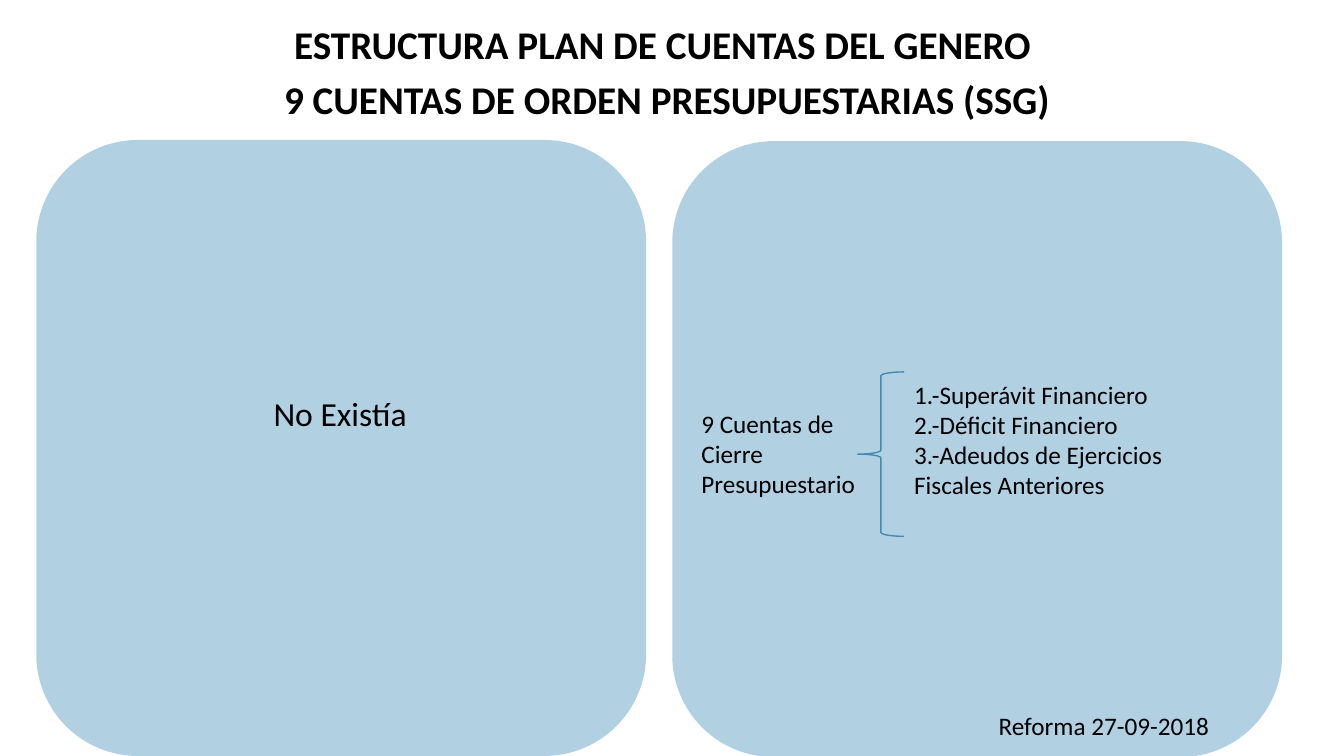
from pptx import Presentation
from pptx.dml.color import RGBColor
from pptx.enum.shapes import MSO_SHAPE
from pptx.enum.text import MSO_ANCHOR, MSO_AUTO_SIZE, PP_ALIGN
from pptx.oxml.ns import qn
from pptx.util import Pt
from lxml import etree

ROUNDED, BRACE = MSO_SHAPE.ROUNDED_RECTANGLE, MSO_SHAPE.LEFT_BRACE
LEFT, CENTER = PP_ALIGN.LEFT, PP_ALIGN.CENTER
TOP, NO_FIT = MSO_ANCHOR.TOP, MSO_AUTO_SIZE.NONE

THEME = {
    "font": "Calibri",
    "text": RGBColor(0x00, 0x00, 0x00),
    "panel": RGBColor(0xB1, 0xD1, 0xE3),
    "brace": RGBColor(0x41, 0x8A, 0xB3),
    "title": Pt(28),
    "lead": Pt(24),
    "body": Pt(18),
}


def place(shape, left, top, width, height):
    shape.left, shape.top = Pt(left), Pt(top)
    shape.width, shape.height = Pt(width), Pt(height)


def write(shape, text, size, align=LEFT, bold=False):
    frame = shape.text_frame
    frame.text = text
    frame.word_wrap = True
    frame.auto_size = NO_FIT
    frame.vertical_anchor = TOP
    for para in frame.paragraphs:
        para.alignment = align
        para.space_before = Pt(0)
        for span in para.runs:
            span.font.name = THEME["font"]
            span.font.size = THEME[size]
            span.font.bold = bold
            span.font.color.rgb = THEME["text"]


deck = Presentation()
deck.slide_width, deck.slide_height = Pt(960), Pt(540)
page = deck.slides.add_slide(deck.slide_layouts[1])

title = page.shapes.title
place(title, 35.3, 14.4, 882, 80)
write(
    title,
    "ESTRUCTURA PLAN DE CUENTAS DEL GENERO \n9 CUENTAS DE ORDEN PRESUPUESTARIAS (SSG)",
    "title", CENTER, True,
)
for para in title.text_frame.paragraphs:
    para.line_spacing = 0.9
    para.space_after = Pt(9.5)

for left, top in ((25.9, 100), (480.2, 100.8)):
    panel = page.shapes.add_shape(ROUNDED, Pt(left), Pt(top), Pt(435.6), Pt(440))
    panel.shadow.inherit = False
    panel.fill.solid()
    panel.fill.fore_color.rgb = THEME["panel"]
    panel.line.fill.background()

brace = page.shapes.add_shape(BRACE, Pt(612.7), Pt(265.7), Pt(33.1), Pt(117.4))
brace.shadow.inherit = False
brace.fill.background()
brace.line.color.rgb = THEME["brace"]
brace.line.width = Pt(1)

accounts = page.placeholders[1]
place(accounts, 645.8, 267.1, 196.6, 116.6)
write(
    accounts,
    "1.-Superávit Financiero\n2.-Déficit Financiero\n3.-Adeudos de Ejercicios Fiscales Anteriores",
    "body",
)
for para in accounts.text_frame.paragraphs:
    properties = para._p.get_or_add_pPr()
    properties.set("marL", "0")
    properties.set("indent", "0")
    etree.SubElement(properties, qn("a:buNone"))
brace.element.addnext(accounts.element)

LABELS = (
    ("No Existía", (155.5, 277.2, 175, 36), "lead", CENTER),
    ("9 Cuentas de Cierre Presupuestario", (493.9, 288, 130.3, 72.7), "body", LEFT),
    ("Reforma 27-09-2018", (706.3, 504, 180.7, 28.8), "body", LEFT),
)
for text, bounds, size, align in LABELS:
    box = page.shapes.add_textbox(*map(Pt, bounds))
    write(box, text, size, align)

deck.save("out.pptx")
